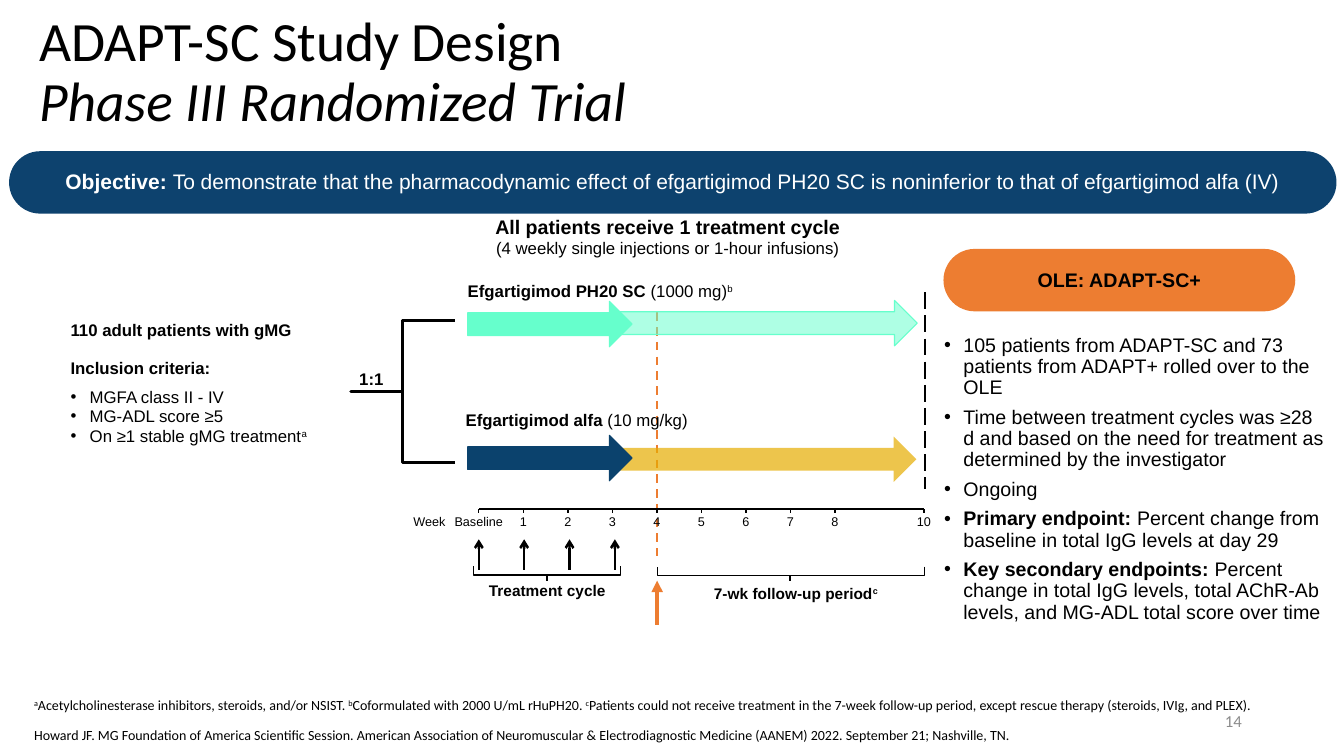
from pptx import Presentation
from pptx.dml.color import RGBColor
from pptx.enum.dml import MSO_LINE as DASH
from pptx.enum.shapes import MSO_CONNECTOR, MSO_SHAPE as SHAPE
from pptx.enum.text import MSO_ANCHOR as ANCHOR, PP_ALIGN as ALIGN
from pptx.oxml.ns import qn
from pptx.util import Pt
from lxml.etree import SubElement

color = RGBColor.from_string
BLACK, WHITE, NAVY, ORANGE, MINT = "000000", "FFFFFF", "0D426E", "ED7D31", "66FFCC"

deck = Presentation()
deck.slide_width, deck.slide_height = Pt(960), Pt(540)
slide = deck.slides.add_slide(deck.slide_layouts[6])
shapes = slide.shapes


def write(holder, paragraphs, size, align=ALIGN.LEFT, anchor=ANCHOR.TOP, inset=(7.2, 3.6),
          ink=BLACK, face="Arial", spacing=1.0):
    frame = holder.text_frame
    frame.word_wrap = True
    frame.vertical_anchor = anchor
    frame.margin_left = frame.margin_right = Pt(inset[0])
    frame.margin_top = frame.margin_bottom = Pt(inset[1])
    for index, (runs, extra) in enumerate(paragraphs):
        paragraph = frame.paragraphs[0] if index == 0 else frame.add_paragraph()
        paragraph.alignment = align
        paragraph.line_spacing = spacing
        paragraph.space_before = Pt(extra.get("before", 0))
        paragraph.space_after = Pt(extra.get("after", 0))
        if extra.get("bullet"):
            properties = paragraph._p.get_or_add_pPr()
            properties.set("marL", str(Pt(13.7)))
            properties.set("indent", str(-Pt(13.7)))
            SubElement(properties, qn("a:buFont"), typeface="Arial")
            SubElement(properties, qn("a:buChar"), char="•")
        paragraph.font.name = face
        paragraph.font.size = Pt(extra.get("size", size))
        paragraph.font.color.rgb = color(ink)
        for text, style in runs:
            run = paragraph.add_run()
            run.text = text
            if "b" in style:
                run.font.bold = True
            if "i" in style:
                run.font.italic = True
            if "^" in style:
                run._r.get_or_add_rPr().set("baseline", "30000")


def connect(x1, y1, x2, y2, width, ink=BLACK, dash=None, head=None):
    connector = shapes.add_connector(MSO_CONNECTOR.STRAIGHT, Pt(x1), Pt(y1), Pt(x2), Pt(y2))
    SubElement(connector._element.spPr, qn("a:effectLst"))
    connector.line.color.rgb = color(ink)
    connector.line.width = Pt(width)
    if dash:
        connector.line.dash_style = dash
    if head:
        SubElement(connector.line._get_or_add_ln(), qn("a:tailEnd"), type=head)


connect(469.4, 223.2, 469.4, 401, 1.5, ORANGE, DASH.DASH)

banners = [
    (6.5, 108, 948.2, NAVY, WHITE, 15, 0.88, [
        ("Objective: ", "b"),
        ("To demonstrate that the pharmacodynamic effect of efgartigimod PH20 SC is "
         "noninferior to that of efgartigimod alfa (IV)", "")]),
    (673.9, 177.8, 251.3, ORANGE, BLACK, 14, 1.0, [("OLE: ADAPT-SC+", "b")]),
]
for left, top, width, fill, ink, size, spacing, runs in banners:
    banner = shapes.add_shape(SHAPE.ROUNDED_RECTANGLE, Pt(left), Pt(top), Pt(width), Pt(44.6))
    banner.adjustments[0] = 0.5
    banner.shadow.inherit = False
    banner.fill.solid()
    banner.fill.fore_color.rgb = color(fill)
    banner.line.fill.background()
    write(banner, [(runs, {})], size, ALIGN.CENTER, ANCHOR.MIDDLE, ink=ink, spacing=spacing)

arms = [
    (437.8, 311.8, 216.7, "E6AD00", 70, None),
    (334.1, 311, 117.4, "0B426D", 100, "0B426D"),
    (334.1, 215.3, 117.4, MINT, 100, MINT),
    (440.6, 214.6, 214.6, MINT, 53, MINT),
]
for left, top, width, fill, opacity, edge in arms:
    arm = shapes.add_shape(SHAPE.RIGHT_ARROW, Pt(left), Pt(top), Pt(width), Pt(32.4))
    arm.shadow.inherit = False
    arm.fill.solid()
    arm.fill.fore_color.rgb = color(fill)
    if opacity < 100:
        tint = next(arm._element.spPr.iter(qn("a:srgbClr")))
        SubElement(tint, qn("a:alpha"), val=str(opacity * 1000))
    if edge:
        arm.line.color.rgb = color(edge)
        arm.line.width = Pt(0.85)
    else:
        arm.line.fill.background()

outlines = [
    (SHAPE.LEFT_BRACE, 250.6, 229, 74.2, 101.5, 0, 2.25),
    (SHAPE.LEFT_BRACKET, 561.6, 312.5, 6.5, 190.8, 270, 1),
    (SHAPE.LEFT_BRACKET, 387.4, 355, 6.5, 105.1, 270, 1),
]
for kind, left, top, width, height, turn, weight in outlines:
    outline = shapes.add_shape(kind, Pt(left), Pt(top), Pt(width), Pt(height))
    outline.adjustments[0] = 0
    outline.rotation = turn
    outline.shadow.inherit = False
    outline.fill.background()
    outline.line.color.rgb = color(BLACK)
    outline.line.width = Pt(weight)

for middle in (391, 564.5):
    connect(middle, 411.1, middle, 414.7, 1.5)
connect(661, 208.8, 661, 349.2, 1.5, dash=DASH.LONG_DASH)
for dose in range(4):
    injection = 342 + 32.4 * dose
    connect(injection, 406.8, injection, 385.2, 1.75, head="arrow")
connect(469.4, 446.4, 469.4, 414.7, 2.75, ORANGE, head="triangle")

baseline, week_step = 342, 31.8
connect(baseline, 363.6, baseline + 10 * week_step, 363.6, 1)
axis_labels = [("Week", 306.7)]
for week in (0, 1, 2, 3, 4, 5, 6, 7, 8, 10):
    tick = baseline + week * week_step
    connect(tick, 363.6, tick, 366.5, 1)
    axis_labels.append((str(week) if week else "Baseline", tick))
for label, middle in axis_labels:
    holder = shapes.add_textbox(Pt(middle - 25), Pt(363.6), Pt(50), Pt(18))
    write(holder, [([(label, "")], {})], 9, ALIGN.CENTER, inset=(0, 3.6))

captions = [
    (332.6, 293, 242, 14.4, 12, ALIGN.LEFT, [("Efgartigimod alfa ", "b"), ("(10 mg/kg)", "")]),
    (334.1, 200.2, 300, 14.4, 12, ALIGN.LEFT,
     [("Efgartigimod PH20 SC", "b"), (" (1000 mg)", ""), ("b", "^")]),
    (246.2, 263.5, 38.2, 14.4, 12, ALIGN.CENTER, [("1:1", "b")]),
    (488.9, 414.7, 159.1, 18, 11, ALIGN.CENTER, [("7-wk follow-up period", "b"), ("c", "b^")]),
    (339.1, 414.7, 103.7, 14.4, 11, ALIGN.CENTER, [("Treatment cycle", "b")]),
]
for left, top, width, height, size, align, runs in captions:
    caption = shapes.add_textbox(Pt(left), Pt(top), Pt(width), Pt(height))
    write(caption, [(runs, {})], size, align, ANCHOR.MIDDLE, (0, 0))

title = shapes.add_textbox(Pt(20.9), Pt(7.9), Pt(864), Pt(89.3))
write(title, [([("ADAPT-SC Study Design", "")], {}),
              ([("Phase III Randomized Trial", "i")], {})],
      39.6, anchor=ANCHOR.MIDDLE, face="Calibri", spacing=0.9)

cycle = shapes.add_textbox(Pt(315.4), Pt(149.8), Pt(323.3), Pt(38.9))
write(cycle, [([("All patients receive 1 treatment cycle", "b")], {"size": 14}),
              ([("(4 weekly single injections or 1-hour infusions)", "")], {})],
      12, ALIGN.CENTER)

criterion = {"bullet": True, "before": 1}
patients = shapes.add_textbox(Pt(50.4), Pt(230), Pt(186.5), Pt(90))
write(patients, [
    ([("110 adult patients with gMG", "b")], {}),
    ([("Inclusion criteria:", "b")], {"before": 14.4}),
    ([("MGFA class II - IV", "")], {"bullet": True, "before": 7.2}),
    ([("MG-ADL score ≥5", "")], criterion),
    ([("On ≥1 stable gMG treatment", ""), ("a", "^")], criterion),
], 12, inset=(0, 0), spacing=0.9)

extension_points = [
    [("105 patients from ADAPT-SC and 73 patients from ADAPT+ rolled over to the OLE", "")],
    [("Time between treatment cycles was ≥28 d and based on the need for treatment as "
      "determined by the investigator", "")],
    [("Ongoing", "")],
    [("Primary endpoint: ", "b"),
     ("Percent change from baseline in total IgG levels at day 29", "")],
    [("Key secondary endpoints: ", "b"),
     ("Percent change in total IgG levels, total AChR-Ab levels, and MG-ADL total score "
      "over time", "")],
]
extension = shapes.add_textbox(Pt(667.4), Pt(236), Pt(288), Pt(214))
write(extension, [(runs, {"bullet": True, "before": 3 if index else 0, "after": 3})
                  for index, runs in enumerate(extension_points)], 14, spacing=0.9)

footnotes = shapes.add_textbox(Pt(17.3), Pt(491), Pt(903.6), Pt(43.9))
write(footnotes, [
    ([("a", "^"), ("Acetylcholinesterase inhibitors, steroids, and/or NSIST. ", ""),
      ("b", "^"), ("Coformulated with 2000 U/mL rHuPH20. ", ""),
      ("c", "^"), ("Patients could not receive treatment in the 7-week follow-up period, "
                   "except rescue therapy (steroids, IVIg, and PLEX).", "")], {}),
    ([("Howard JF. MG Foundation of America Scientific Session. American Association of "
       "Neuromuscular & Electrodiagnostic Medicine (AANEM) 2022. September 21; "
       "Nashville, TN.", "")], {"before": 11}),
], 10, anchor=ANCHOR.BOTTOM, face="Calibri", spacing=0.9)

page_number = shapes.add_textbox(Pt(678.2), Pt(500.4), Pt(216), Pt(28.8))
write(page_number, [([("14", "")], {})], 12, ALIGN.RIGHT, ANCHOR.MIDDLE,
      ink="8C8C8C", face="Calibri")

deck.save("out.pptx")
